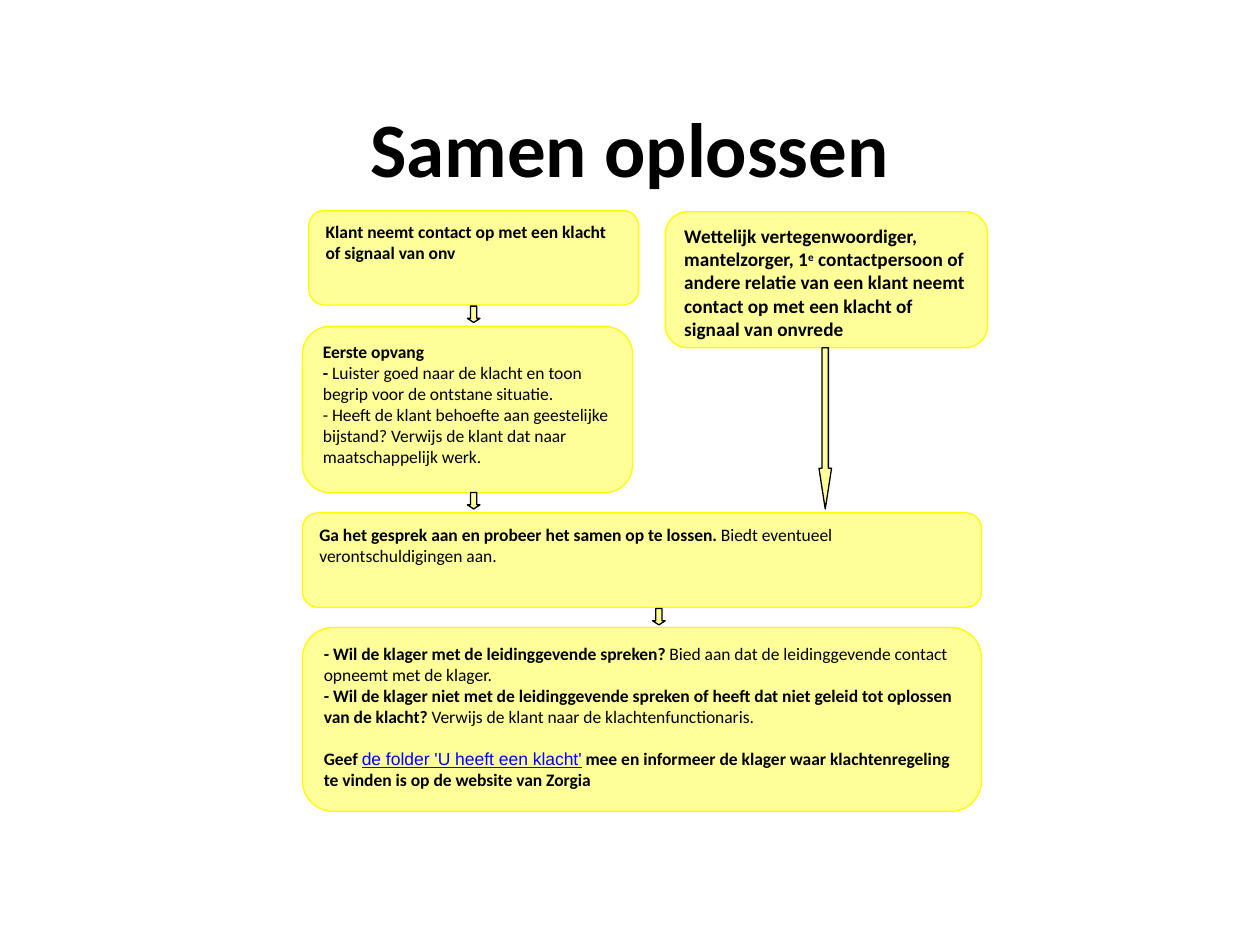
from dataclasses import dataclass

from pptx import Presentation
from pptx.dml.color import RGBColor
from pptx.enum.shapes import MSO_SHAPE
from pptx.enum.text import MSO_ANCHOR, PP_ALIGN
from pptx.util import Inches, Pt

ROUNDED = MSO_SHAPE.FLOWCHART_ALTERNATE_PROCESS
DOWN_ARROW = MSO_SHAPE.DOWN_ARROW
TOP, MIDDLE = MSO_ANCHOR.TOP, MSO_ANCHOR.MIDDLE
LEFT, CENTER = PP_ALIGN.LEFT, PP_ALIGN.CENTER


@dataclass(frozen=True)
class Theme:
    font: str = "Calibri"
    link_font: str = "Arial"
    ink: RGBColor = RGBColor(0x00, 0x00, 0x00)
    link: RGBColor = RGBColor(0x00, 0x00, 0xFF)
    fill: RGBColor = RGBColor(0xFF, 0xFF, 0x99)
    border: RGBColor = RGBColor(0xFF, 0xFF, 0x00)
    line: Pt = Pt(0.75)
    title: Pt = Pt(44)
    body: Pt = Pt(10)
    large: Pt = Pt(11)
    gap: Pt = Pt(12)


THEME = Theme()

# Each step: left, top, width, height, type size, paragraphs of (text, style).
STEPS = [
    (2.45, 1.67, 2.62, 0.75, THEME.body, [
        [("Klant neemt contact op met een klacht of signaal van onv", "bold")],
    ]),
    (5.28, 1.68, 2.56, 1.08, THEME.large, [
        [("Wettelijk vertegenwoordiger, mantelzorger, 1", "bold"),
         ("e", "superscript"),
         (" contactpersoon of andere relatie van een klant neemt contact op "
          "met een klacht of signaal van onvrede", "bold")],
    ]),
    (2.4, 2.59, 2.62, 1.32, THEME.body, [
        [("Eerste opvang", "bold")],
        [("- ", "bold"),
         ("Luister goed naar de klacht en toon begrip voor de ontstane situatie.", "plain")],
        [("- Heeft de klant behoefte aan geestelijke bijstand? Verwijs de klant "
          "dat naar maatschappelijk werk.", "plain")],
    ]),
    (2.4, 4.07, 5.39, 0.75, THEME.body, [
        [("Ga het gesprek aan en probeer het samen op te lossen. ", "bold"),
         ("Biedt eventueel verontschuldigingen aan.", "plain")],
    ]),
]
FOLLOW_UP = (2.4, 4.98, 5.39, 1.46, THEME.body, [
    [("- Wil de klager met de leidinggevende spreken? ", "bold"),
     ("Bied aan dat de leidinggevende contact opneemt met de klager.", "plain")],
    [("- Wil de klager niet met de leidinggevende spreken of heeft dat niet "
      "geleid tot oplossen van de klacht? ", "bold"),
     ("Verwijs de klant naar de klachtenfunctionaris.", "plain")],
    [("Geef ", "bold"),
     ("de folder 'U heeft een klacht'", "link"),
     (" mee en informeer de klager waar klachtenregeling te vinden is op de "
      "website van Zorgia", "bold")],
])

# Each arrow: left, top, height, head length relative to the width.
ARROWS = [
    (3.71, 2.43, 0.13, 0.325),
    (6.5, 2.76, 1.28, 3.24),
    (3.71, 3.91, 0.13, 0.325),
    (5.18, 4.83, 0.13, 0.325),
]
ARROW_WIDTH = 0.1


def add_span(para, text, style):
    span = para.add_run()
    span.text = text
    span.font.bold = style in ("bold", "superscript")
    if style == "superscript":
        span.font._element.set("baseline", "30000")
    elif style == "link":
        span.font.name = THEME.link_font
        span.font.color.rgb = THEME.link
        span.font.underline = True


def write_paragraphs(frame, paragraphs, size, align=LEFT, anchor=TOP):
    frame.word_wrap = True
    frame.vertical_anchor = anchor
    for index, spans in enumerate(paragraphs):
        para = frame.add_paragraph() if index else frame.paragraphs[0]
        para.alignment = align
        para.font.name = THEME.font
        para.font.size = size
        para.font.color.rgb = THEME.ink
        for text, style in spans:
            add_span(para, text, style)


def add_filled_shape(page, kind, left, top, width, height, line_color):
    shape = page.shapes.add_shape(
        kind, Inches(left), Inches(top), Inches(width), Inches(height))
    shape.shadow.inherit = False
    shape.fill.solid()
    shape.fill.fore_color.rgb = THEME.fill
    shape.line.color.rgb = line_color
    shape.line.width = THEME.line
    return shape


def add_title(page, text):
    box = page.shapes.add_textbox(Inches(0.5), Inches(0.77), Inches(9), Inches(0.79))
    write_paragraphs(box.text_frame, [[(text, "bold")]], THEME.title, CENTER, MIDDLE)


def add_step(page, left, top, width, height, size, paragraphs):
    box = add_filled_shape(page, ROUNDED, left, top, width, height, THEME.border)
    write_paragraphs(box.text_frame, paragraphs, size)
    return box


def add_arrow(page, left, top, height, head):
    arrow = add_filled_shape(page, DOWN_ARROW, left, top, ARROW_WIDTH, height, THEME.ink)
    arrow.adjustments[0] = 0.5
    arrow.adjustments[1] = head


def main():
    deck = Presentation()
    deck.slide_width, deck.slide_height = Inches(10), Inches(7.5)
    page = deck.slides.add_slide(deck.slide_layouts[6])
    add_title(page, "Samen oplossen")
    for step in STEPS:
        add_step(page, *step)
    follow_up = add_step(page, *FOLLOW_UP)
    follow_up.text_frame.paragraphs[-1].space_before = THEME.gap
    for arrow in ARROWS:
        add_arrow(page, *arrow)
    deck.save("out.pptx")


if __name__ == "__main__":
    main()
